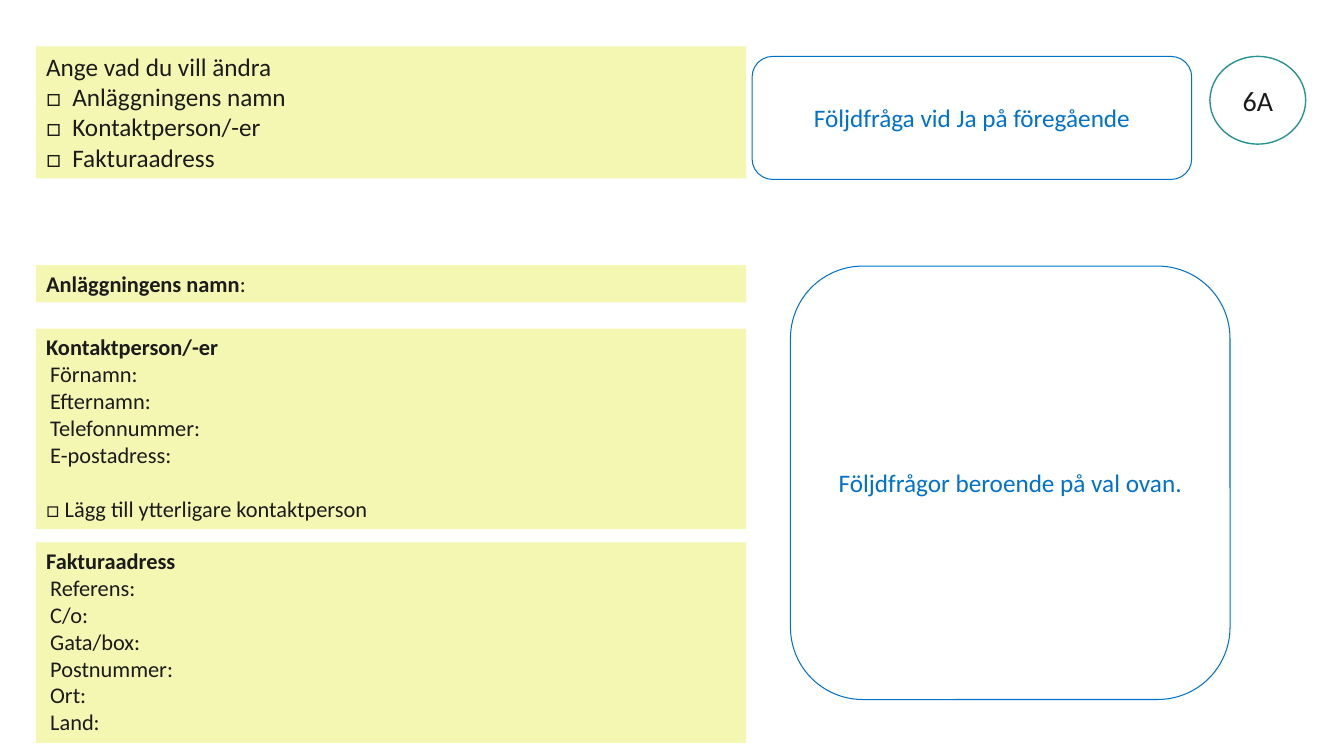
from dataclasses import dataclass

from lxml.etree import SubElement
from pptx import Presentation
from pptx.dml.color import RGBColor
from pptx.enum.shapes import MSO_SHAPE as Shape
from pptx.enum.text import MSO_ANCHOR as Anchor, PP_ALIGN as Align
from pptx.oxml.ns import qn
from pptx.slide import Slide
from pptx.util import Pt

PX = 9144  # 100 px to the inch
FONT = "Calibri"
COLOURS = {"form": "F4F7B2", "ink": "1B1B1B", "blue": "0072CA",
           "teal": "259490", "white": "FFFFFF"}
FORM_LEFT, FORM_WIDTH = 36, 704
FIELD_INDENT, CHECK_INDENT = 4, 26


@dataclass(frozen=True)
class Line:
    text: str
    bold: bool = False
    indent: int = 0
    hanging: bool = False
    space_before: float = 0


@dataclass(frozen=True)
class Form:
    top: int
    height: int
    size: int
    lines: list[Line]


@dataclass(frozen=True)
class Note:
    shape: Shape
    left: int
    top: int
    width: int
    height: int
    text: str
    size: int
    colour: str
    outline: str
    outline_width: float
    fill: str | None = None


def heading(text: str) -> Line:
    return Line(text, bold=True)


def fields(*names: str) -> list[Line]:
    return [Line(f"{name}:", indent=FIELD_INDENT) for name in names]


def choices(*names: str) -> list[Line]:
    return [Line(f"□\t{name}", indent=CHECK_INDENT, hanging=True) for name in names]


FORMS = [
    Form(46, 131, 18, [Line("Ange vad du vill ändra"),
                       *choices("Anläggningens namn", "Kontaktperson/-er", "Fakturaadress")]),
    Form(263, 37, 16, [heading("Anläggningens namn")]),
    Form(326, 199, 16, [heading("Kontaktperson/-er"),
                        *fields("Förnamn", "Efternamn", "Telefonnummer", "E-postadress"),
                        Line("□ Lägg till ytterligare kontaktperson", space_before=19.5)]),
    Form(538, 199, 16, [heading("Fakturaadress"),
                        *fields("Referens", "C/o", "Gata/box", "Postnummer", "Ort", "Land")]),
]
NOTES = [
    Note(Shape.OVAL, 1200, 56, 95, 87, "6A", 20, "ink", "teal", 1, "white"),
    Note(Shape.ROUNDED_RECTANGLE, 746, 56, 436, 122,
         "Följdfråga vid Ja på föregående", 18, "blue", "blue", 0.75),
    Note(Shape.ROUNDED_RECTANGLE, 784, 264, 436, 430,
         "Följdfrågor beroende på val ovan.", 18, "blue", "blue", 0.75),
]


def rgb(name: str) -> RGBColor:
    return RGBColor.from_string(COLOURS[name])


def set_font(para, size: int, colour: str, bold: bool = False) -> None:
    font = para.font
    font.name, font.size, font.bold = FONT, Pt(size), bold
    font.color.rgb = rgb(colour)


def set_indent(para, line: Line) -> None:
    """Indent a paragraph; a hanging one gets a tab stop at its indent."""
    margin = str(line.indent * PX)
    properties = para._p.get_or_add_pPr()
    properties.set("marL", margin)
    if line.hanging:
        properties.set("indent", f"-{margin}")
        stops = SubElement(properties, qn("a:tabLst"))
        SubElement(stops, qn("a:tab"), pos=margin, algn="l")


def draw_form(page: Slide, form: Form):
    box = page.shapes.add_textbox(FORM_LEFT * PX, form.top * PX,
                                  FORM_WIDTH * PX, form.height * PX)
    box.fill.solid()
    box.fill.fore_color.rgb = rgb("form")
    frame = box.text_frame
    frame.word_wrap = True
    for number, line in enumerate(form.lines):
        para = frame.add_paragraph() if number else frame.paragraphs[0]
        para.add_run().text = line.text
        if line.space_before:
            para.space_before = Pt(line.space_before)
        if line.indent:
            set_indent(para, line)
        set_font(para, form.size, "ink", line.bold)
    return box


def draw_note(page: Slide, note: Note) -> None:
    box = page.shapes.add_shape(note.shape, note.left * PX, note.top * PX,
                                note.width * PX, note.height * PX)
    box.shadow.inherit = False
    if note.fill:
        box.fill.solid()
        box.fill.fore_color.rgb = rgb(note.fill)
    else:
        box.fill.background()
    box.line.color.rgb = rgb(note.outline)
    box.line.width = Pt(note.outline_width)
    box.text_frame.vertical_anchor = Anchor.MIDDLE
    para = box.text_frame.paragraphs[0]
    para.text = note.text
    para.alignment = Align.CENTER
    set_font(para, note.size, note.colour)


def main() -> None:
    deck = Presentation()
    deck.slide_width, deck.slide_height = 1333 * PX, 750 * PX
    page = deck.slides.add_slide(deck.slide_layouts[6])
    boxes = [draw_form(page, form) for form in FORMS]
    colon = boxes[1].text_frame.paragraphs[0].add_run()
    colon.text, colon.font.bold = ":", False
    for note in NOTES:
        draw_note(page, note)
    deck.save("out.pptx")


if __name__ == "__main__":
    main()
